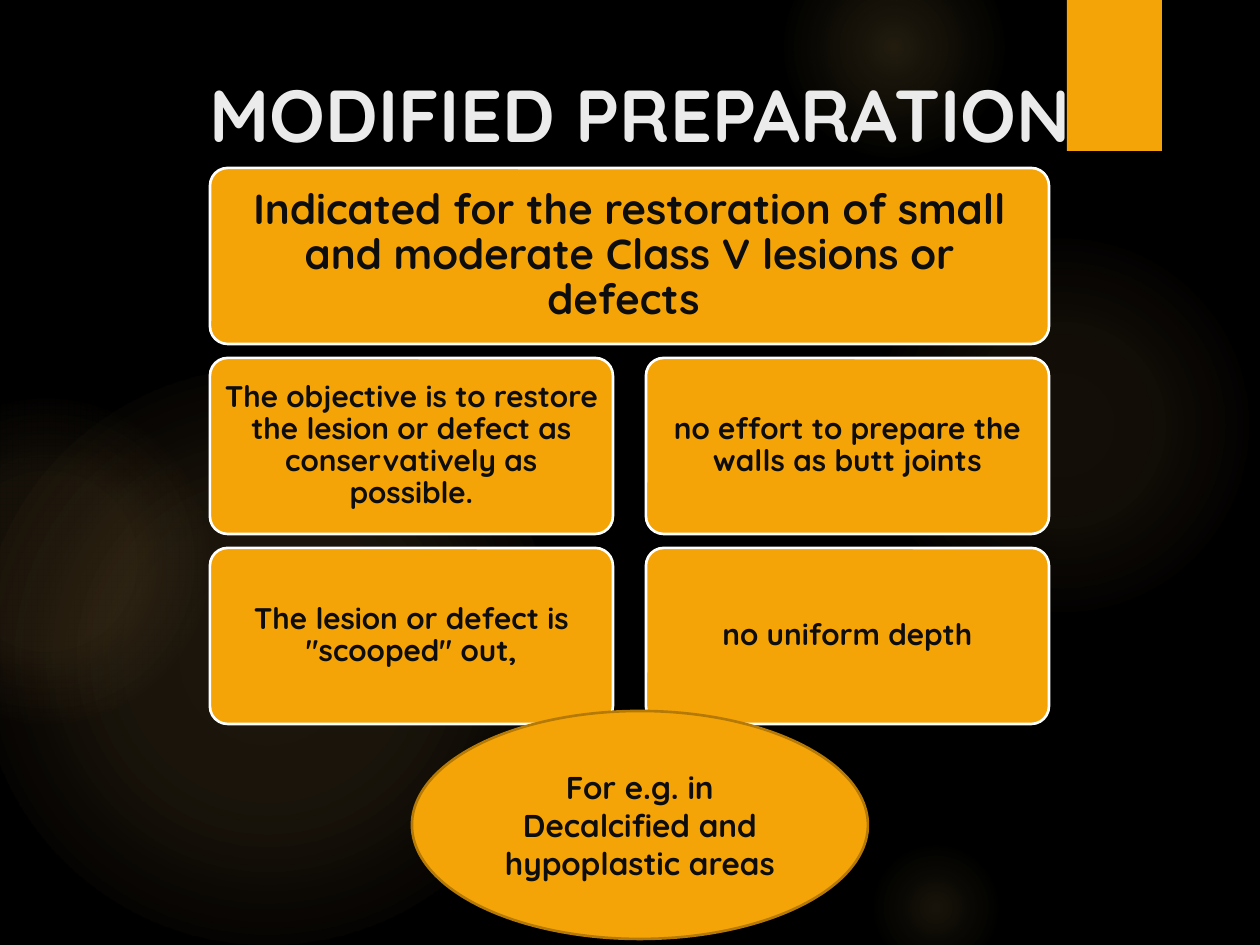
import pptx
import pptx.dml.color
import pptx.enum.shapes
import pptx.enum.text
import pptx.oxml
import pptx.oxml.ns
import pptx.util

RGBColor = pptx.dml.color.RGBColor
SHAPES = pptx.enum.shapes.MSO_SHAPE
ANCHOR = pptx.enum.text.MSO_ANCHOR

BLACK = RGBColor(0x00, 0x00, 0x00)
WHITE = RGBColor(0xFF, 0xFF, 0xFF)
AMBER = RGBColor(0xF5, 0xA4, 0x08)
DARK_AMBER = RGBColor(0xB5, 0x79, 0x06)
GLOW = RGBColor(0xFA, 0xC9, 0x6A)
TITLE_GREY = RGBColor(0xEB, 0xEB, 0xEB)
INK = RGBColor(0x0D, 0x0D, 0x0D)

FONT = "Quicksand"
EMU_PER_PX = 914400 / 126

GLOWS = [
    (868, 231, 388, [(0, 7), (36, 6), (69, 0)]),
    (784, -63, 220, [(0, 14), (36, 7), (73, 0)]),
    (868, 840, 136, [(0, 10), (31, 5), (66, 0)]),
    (-21, 368, 577, [(0, 11), (36, 10), (75, 0)]),
    (-116, 399, 325, [(0, 8), (36, 8), (72, 0)]),
]

CARD_LEFT, CARD_TOP = 210, 168
CARD_WIDTH, CARD_HEIGHT = 403, 176
COLUMN_STEP, ROW_STEP = 436, 190
HEADING = "Indicated for the restoration of small and moderate Class V lesions or defects "
DETAILS = [
    [
        "The objective is to restore the lesion or defect as conservatively as possible.",
        "no effort to prepare the walls as butt joints",
    ],
    ["The lesion or defect is \"scooped\" out,", "no uniform depth"],
]


def px(length):
    return pptx.util.Emu(round(length * EMU_PER_PX))


def add_panel(slide, kind, left, top, width, height, fill=None, line=None):
    shape = slide.shapes.add_shape(kind, px(left), px(top), px(width), px(height))
    shape.shadow.inherit = False
    if fill is not None:
        shape.fill.solid()
        shape.fill.fore_color.rgb = fill
    if line is None:
        shape.line.fill.background()
    else:
        shape.line.color.rgb = line
        shape.line.width = pptx.util.Pt(1.5)
    return shape


def write_text(shape, text, size, color, anchor=ANCHOR.MIDDLE, inset=None, spacing=None):
    frame = shape.text_frame
    frame.word_wrap = True
    frame.vertical_anchor = anchor
    if inset is not None:
        frame.margin_left = frame.margin_right = px(inset)
        frame.margin_top = frame.margin_bottom = px(inset)
    paragraph = frame.paragraphs[0]
    paragraph.alignment = pptx.enum.text.PP_ALIGN.CENTER
    if spacing is not None:
        paragraph.line_spacing = spacing
    run = paragraph.add_run()
    run.text = text
    run.font.name = FONT
    run.font.size = pptx.util.Pt(size)
    run.font.bold = True
    run.font.color.rgb = color


def add_glow(slide, left, top, diameter, stops):
    shape = add_panel(slide, SHAPES.OVAL, left, top, diameter, diameter)
    stop_xml = "".join(
        f'<a:gs pos="{position * 1000}"><a:srgbClr val="{GLOW}">'
        f'<a:alpha val="{opacity * 1000}"/></a:srgbClr></a:gs>'
        for position, opacity in stops
    )
    gradient = pptx.oxml.parse_xml(
        f'<a:gradFill {pptx.oxml.ns.nsdecls("a")} rotWithShape="1">'
        f"<a:gsLst>{stop_xml}</a:gsLst>"
        '<a:path path="circle">'
        '<a:fillToRect l="50000" t="50000" r="50000" b="50000"/>'
        "</a:path></a:gradFill>"
    )
    geometry = shape.element.spPr.find(pptx.oxml.ns.qn("a:prstGeom"))
    geometry.addnext(gradient)


def add_title(slide, text):
    box = slide.shapes.add_textbox(px(154), px(63), px(972), px(193))
    write_text(box, text, 42, TITLE_GREY, anchor=ANCHOR.TOP)


def add_card(slide, column, row, width, text, size, inset):
    card = add_panel(
        slide,
        SHAPES.ROUNDED_RECTANGLE,
        CARD_LEFT + column * COLUMN_STEP,
        CARD_TOP + row * ROW_STEP,
        width,
        CARD_HEIGHT,
        AMBER,
        WHITE,
    )
    card.adjustments[0] = 0.1
    write_text(card, text, size, INK, inset=inset, spacing=0.9)


def main():
    presentation = pptx.Presentation()
    presentation.slide_width = px(1260)
    presentation.slide_height = px(945)
    slide = presentation.slides.add_slide(presentation.slide_layouts[6])
    slide.background.fill.solid()
    slide.background.fill.fore_color.rgb = BLACK

    for left, top, diameter, stops in GLOWS:
        add_glow(slide, left, top, diameter, stops)
    add_panel(slide, SHAPES.RECTANGLE, 1067, 0, 95, 151, AMBER)
    add_title(slide, "MODIFIED PREPARATION")

    add_card(slide, 0, 0, COLUMN_STEP + CARD_WIDTH, HEADING, 24, 13)
    for row, texts in enumerate(DETAILS, start=1):
        for column, text in enumerate(texts):
            add_card(slide, column, row, CARD_WIDTH, text, 17, 9)

    example = add_panel(slide, SHAPES.OVAL, 412, 711, 456, 228, AMBER, DARK_AMBER)
    write_text(example, "For e.g. in Decalcified and hypoplastic areas", 18, INK)

    presentation.save("out.pptx")


if __name__ == "__main__":
    main()
